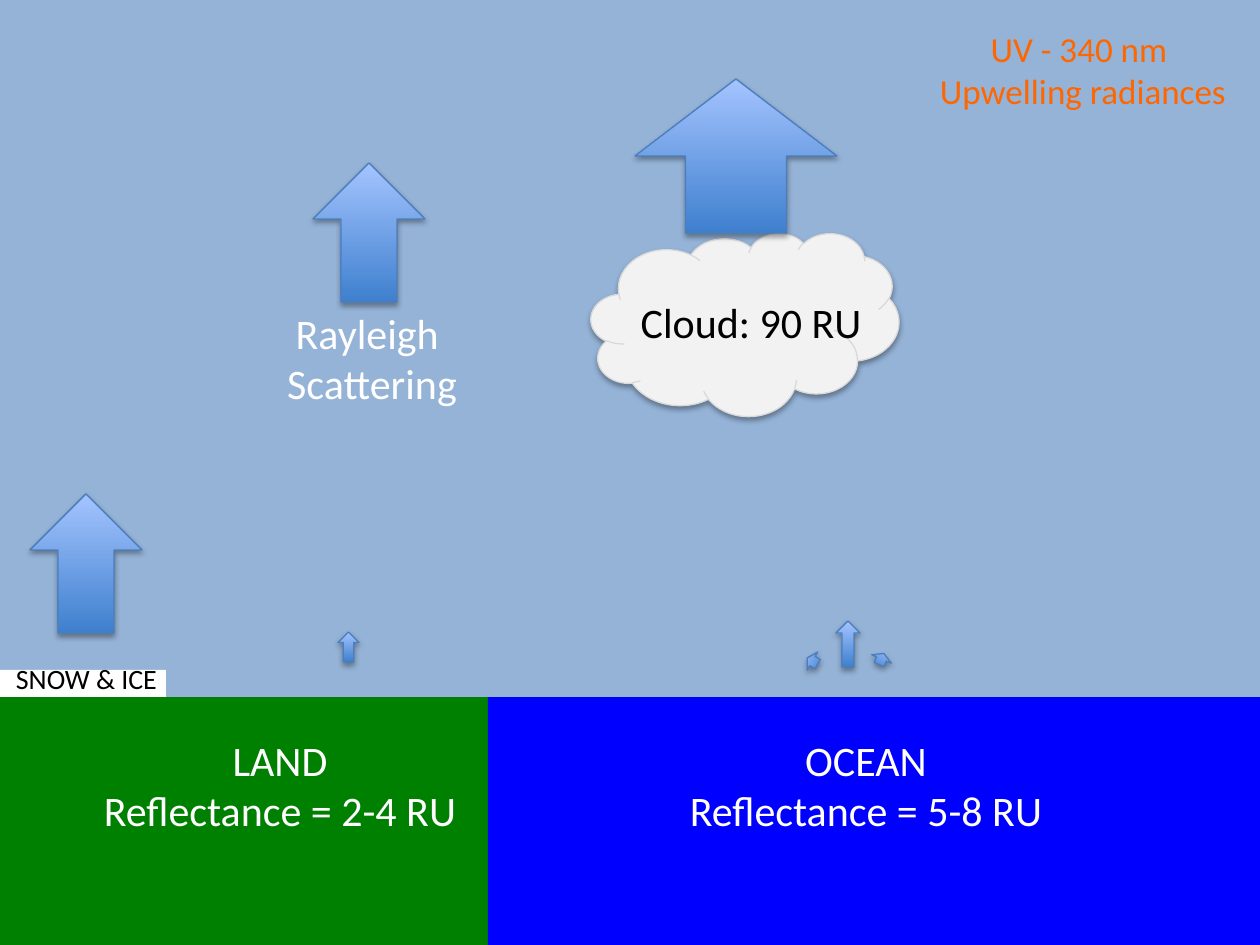
"""Build a slide of upwelling UV radiances over land, ocean, cloud and snow."""
import lxml.etree
import pptx
import pptx.dml.color
import pptx.enum.shapes
import pptx.enum.text
import pptx.oxml.ns
import pptx.util

RGB = pptx.dml.color.RGBColor
SHAPE = pptx.enum.shapes.MSO_SHAPE
PX = 914400 / 126

SKY = RGB(0x95, 0xB3, 0xD7)
LAND = RGB(0x00, 0x80, 0x00)
OCEAN = RGB(0x00, 0x00, 0xFF)
WHITE = RGB(0xFF, 0xFF, 0xFF)
BLACK = RGB(0x00, 0x00, 0x00)
ORANGE = RGB(0xFF, 0x66, 0x00)
CLOUD = RGB(0xF2, 0xF2, 0xF2)
CLOUD_EDGE = RGB(0xD9, 0xD9, 0xD9)
ARROW_DARK = RGB(0x3F, 0x80, 0xCE)
ARROW_LIGHT = RGB(0xA4, 0xC4, 0xFF)
ARROW_EDGE = RGB(0x4B, 0x7E, 0xBC)


def px(*lengths):
    return [pptx.util.Emu(round(n * PX)) for n in lengths]


def write(tf, text, size=24, color=WHITE, font="Calibri",
          align=pptx.enum.text.PP_ALIGN.CENTER):
    for i, line in enumerate(text.split("\n")):
        p = tf.paragraphs[0] if i == 0 else tf.add_paragraph()
        p.alignment = align
        r = p.add_run()
        r.text = line
        r.font.size = pptx.util.Pt(size)
        r.font.name = font
        r.font.color.rgb = color


class Diagram:
    def __init__(self, s):
        self.s = s
        self.line_width = pptx.util.Pt(0.75)

    def shape(self, kind, box, edge=None):
        sp = self.s.shapes.add_shape(kind, *px(*box))
        sp.shadow.inherit = False
        if edge is None:
            sp.line.fill.background()
        else:
            sp.line.color.rgb = edge
            sp.line.width = self.line_width
            self.drop_shadow(sp)
        return sp

    def drop_shadow(self, sp):
        qn = pptx.oxml.ns.qn
        effects = sp._element.spPr.find(qn("a:effectLst"))
        shadow = lxml.etree.SubElement(
            effects, qn("a:outerShdw"), blurRad="40000", dist="23000",
            dir="5400000", rotWithShape="0")
        color = lxml.etree.SubElement(shadow, qn("a:srgbClr"), val=str(BLACK))
        lxml.etree.SubElement(color, qn("a:alpha"), val="35000")

    def block(self, box, color):
        sp = self.shape(SHAPE.RECTANGLE, box)
        sp.fill.solid()
        sp.fill.fore_color.rgb = color

    def cloud(self, box):
        sp = self.shape(SHAPE.CLOUD, box, CLOUD_EDGE)
        sp.fill.solid()
        sp.fill.fore_color.rgb = CLOUD

    def arrow(self, box, rotation=0):
        sp = self.shape(SHAPE.UP_ARROW, box, ARROW_EDGE)
        sp.fill.gradient()
        sp.fill.gradient_angle = 90
        for stop, color in zip(sp.fill.gradient_stops, (ARROW_DARK, ARROW_LIGHT)):
            stop.color.rgb = color
        sp.rotation = rotation

    def label(self, box, text, **style):
        tf = self.s.shapes.add_textbox(*px(*box)).text_frame
        tf.word_wrap = False
        tf.auto_size = pptx.enum.text.MSO_AUTO_SIZE.SHAPE_TO_FIT_TEXT
        write(tf, text, **style)


def main():
    prs = pptx.Presentation()
    prs.slide_width, prs.slide_height = px(1260, 945)
    d = Diagram(prs.slides.add_slide(prs.slide_layouts[6]))

    horizon, coast = 697, 488
    d.block((0, 0, 1260, horizon), SKY)
    d.block((0, horizon, coast, 945 - horizon), LAND)
    d.block((coast, horizon, 1260 - coast, 945 - horizon), OCEAN)
    d.label((89, 728, 382, 115), "LAND\nReflectance = 2-4 RU")
    d.label((675, 728, 382, 115), "OCEAN\nReflectance = 5-8 RU")

    d.arrow((338, 632, 21, 30))
    d.arrow((836, 621, 24, 46))
    d.arrow((313, 163, 112, 139))
    d.label((273, 301, 198, 115), "Rayleigh \nScattering")

    d.cloud((591, 233, 308, 183))
    d.arrow((635, 79, 202, 154))
    d.label((627, 290, 248, 63), "Cloud: 90 RU", color=BLACK)

    d.block((0, 670, 166, 27), WHITE)
    d.arrow((30, 494, 112, 139))
    d.label((2, 655, 169, 47), "SNOW & ICE", size=16, color=BLACK)

    d.label((926, 21, 314, 97), "UV - 340 nm \nUpwelling radiances",
            size=20, color=ORANGE)
    d.arrow((871, 653, 21, 12), 23.3)
    d.arrow((802, 655, 21, 12), 300.2)

    prs.save("out.pptx")


if __name__ == "__main__":
    main()
